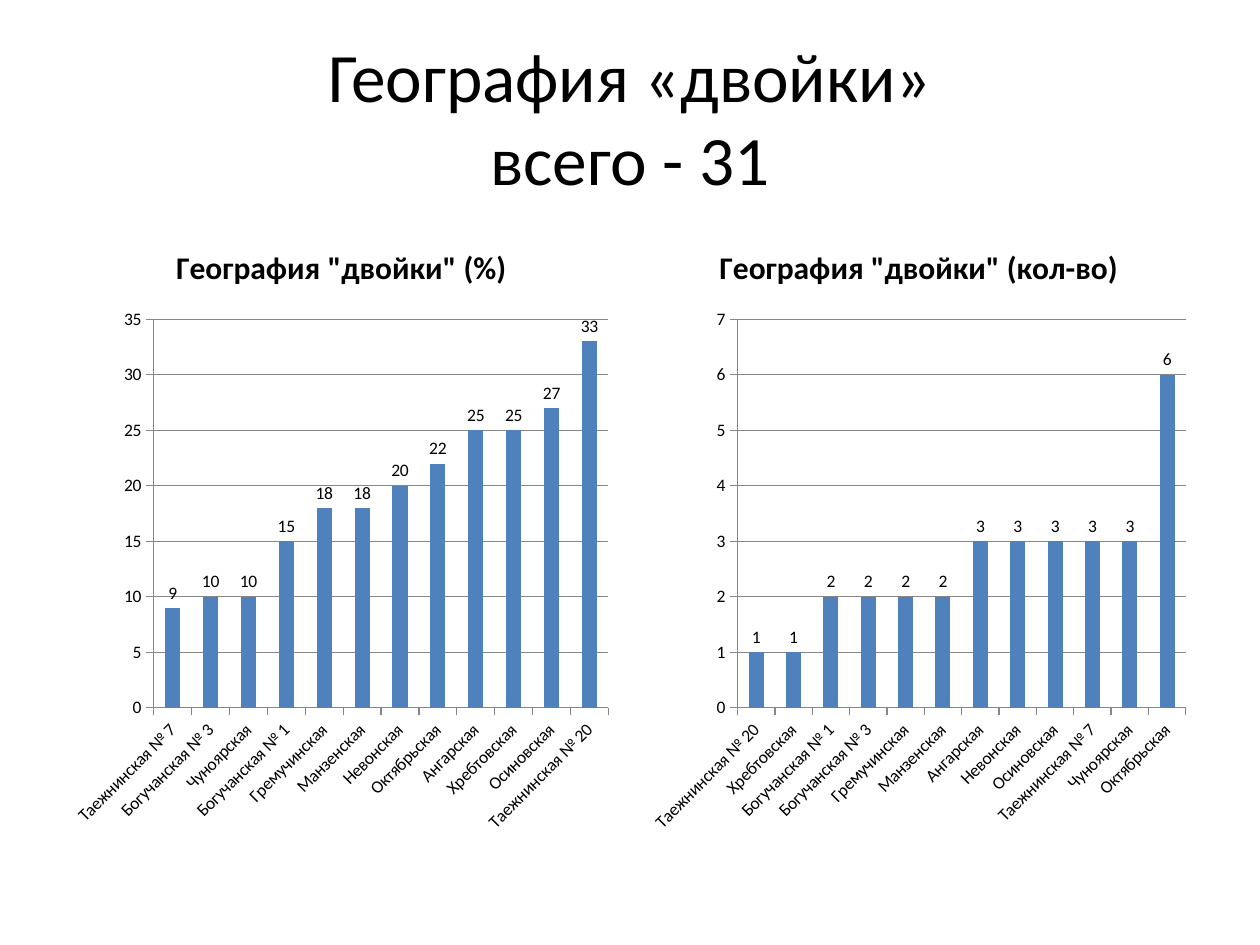
from pptx import Presentation
from pptx.chart.data import CategoryChartData
from pptx.dml.color import RGBColor
from pptx.enum.chart import XL_CHART_TYPE as ChartType, XL_LABEL_POSITION as LabelPosition
from pptx.enum.chart import XL_TICK_MARK as TickMark
from pptx.enum.text import MSO_ANCHOR as Anchor, PP_ALIGN as Align
from pptx.util import Cm, Pt

FONT = "Calibri"
BLACK, BLUE, GRAY = "000000", "4F81BD", "868686"
MARGIN, SLIDE_WIDTH = 1.27, 25.4
CHART_TOP, CHART_WIDTH, CHART_HEIGHT = 4.45, 11.22, 12.57

PERCENTAGES = {
    "Таежнинская № 7": 9, "Богучанская № 3": 10, "Чуноярская": 10,
    "Богучанская № 1": 15, "Гремучинская": 18, "Манзенская": 18,
    "Невонская": 20, "Октябрьская": 22, "Ангарская": 25,
    "Хребтовская": 25, "Осиновская": 27, "Таежнинская № 20": 33,
}
COUNTS = {
    "Таежнинская № 20": 1, "Хребтовская": 1, "Богучанская № 1": 2,
    "Богучанская № 3": 2, "Гремучинская": 2, "Манзенская": 2,
    "Ангарская": 3, "Невонская": 3, "Осиновская": 3,
    "Таежнинская № 7": 3, "Чуноярская": 3, "Октябрьская": 6,
}


def color(value):
    return RGBColor.from_string(value)


def style_font(font, size, bold=False):
    font.name = FONT
    font.size = Pt(size)
    font.bold = bold
    font.color.rgb = color(BLACK)


def fill_title(title, lines):
    title.left, title.top = Cm(MARGIN), Cm(0.76)
    title.width, title.height = Cm(SLIDE_WIDTH - 2 * MARGIN), Cm(3.18)
    frame = title.text_frame
    frame.word_wrap = True
    frame.vertical_anchor = Anchor.MIDDLE
    paragraph = frame.paragraphs[0]
    paragraph.alignment = Align.CENTER
    for index, line in enumerate(lines):
        if index:
            paragraph.add_line_break()
        run = paragraph.add_run()
        run.text = line
        style_font(run.font, 39.6)


def style_axis(axis):
    axis.major_tick_mark = TickMark.OUTSIDE
    axis.minor_tick_mark = TickMark.NONE
    axis.format.line.color.rgb = color(GRAY)
    axis.format.line.width = Pt(0.75)
    style_font(axis.tick_labels.font, 10)


def add_school_chart(slide, left, heading, schools, top_value, step):
    data = CategoryChartData(number_format="0")
    data.categories = list(schools)
    data.add_series("Series 1", list(schools.values()))
    chart = slide.shapes.add_chart(
        ChartType.COLUMN_CLUSTERED, Cm(left), Cm(CHART_TOP),
        Cm(CHART_WIDTH), Cm(CHART_HEIGHT), data).chart
    style_font(chart.font, 10)
    chart.has_legend = False
    chart.has_title = True
    heading_run = chart.chart_title.text_frame.paragraphs[0].add_run()
    heading_run.text = heading
    style_font(heading_run.font, 18, bold=True)

    schools_axis, values_axis = chart.category_axis, chart.value_axis
    style_axis(schools_axis)
    style_axis(values_axis)
    for body in chart.element.xpath(".//c:catAx/c:txPr/a:bodyPr"):
        body.set("rot", "-2700000")
    values_axis.minimum_scale = 0
    values_axis.maximum_scale = top_value
    values_axis.major_unit = step
    values_axis.has_major_gridlines = True
    gridline = values_axis.major_gridlines.format.line
    gridline.color.rgb = color(GRAY)
    gridline.width = Pt(0.75)

    columns = chart.plots[0]
    columns.vary_by_categories = False
    columns.gap_width = 150
    fill = columns.series[0].format.fill
    fill.solid()
    fill.fore_color.rgb = color(BLUE)
    columns.has_data_labels = True
    labels = columns.data_labels
    labels.show_value = True
    labels.position = LabelPosition.OUTSIDE_END
    style_font(labels.font, 10)


def main():
    deck = Presentation()
    deck.slide_width, deck.slide_height = Cm(SLIDE_WIDTH), Cm(19.05)
    slide = deck.slides.add_slide(deck.slide_layouts[5])
    fill_title(slide.shapes.title, ["География «двойки»", "всего - 31"])
    add_school_chart(slide, MARGIN, 'География "двойки" (%)', PERCENTAGES, 35, 5)
    add_school_chart(slide, SLIDE_WIDTH - MARGIN - CHART_WIDTH,
                     'География "двойки" (кол-во)', COUNTS, 7, 1)
    deck.save("out.pptx")


if __name__ == "__main__":
    main()
